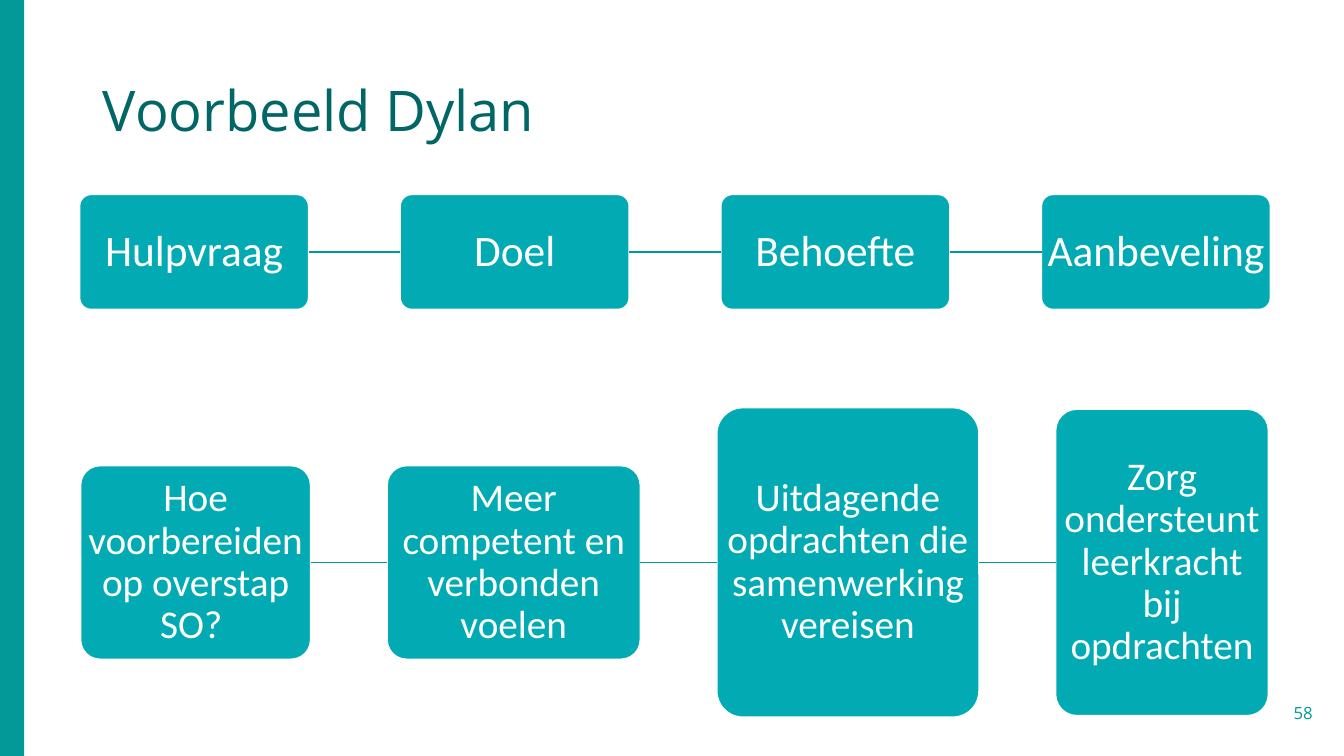
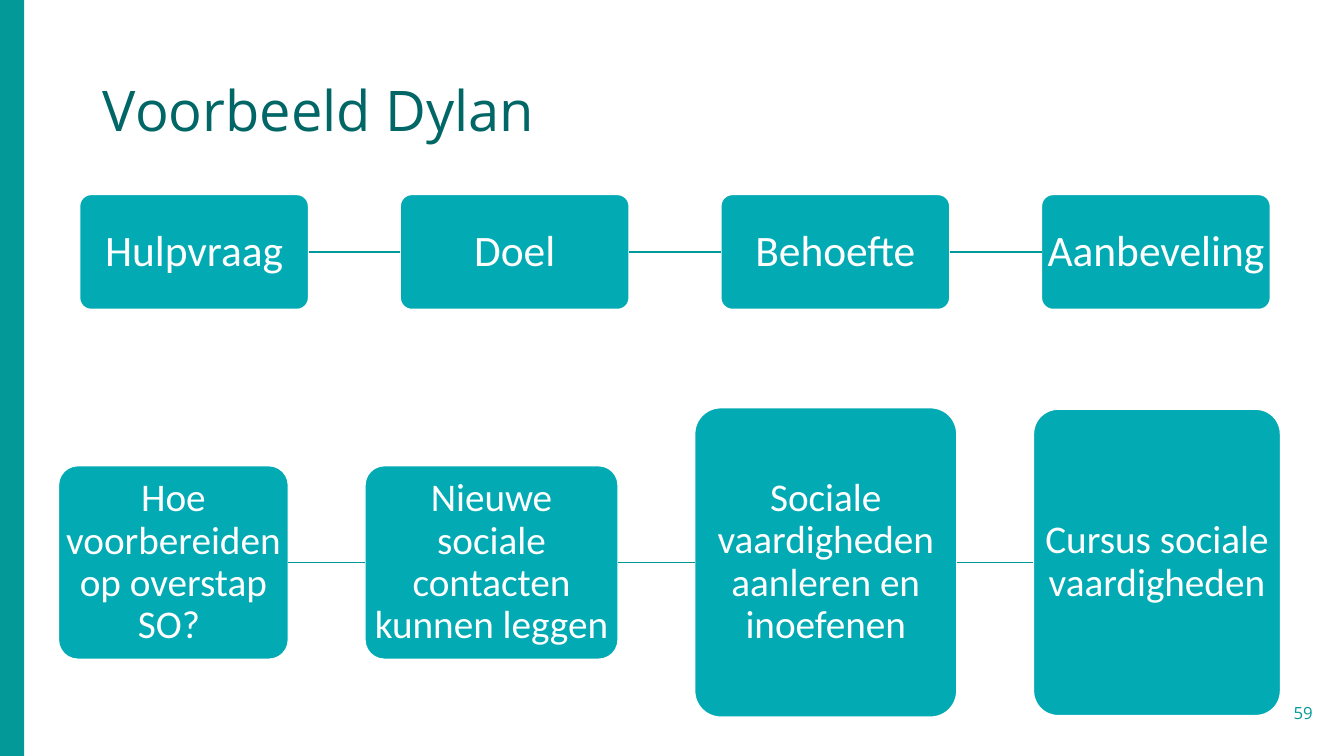
from pptx import Presentation
from pptx.dml.color import RGBColor
from pptx.enum.shapes import MSO_CONNECTOR as Link, MSO_SHAPE as Shape
from pptx.enum.text import MSO_ANCHOR as Anchor, MSO_AUTO_SIZE as Fit, PP_ALIGN as Align
from pptx.oxml.ns import qn
from pptx.util import Inches, Pt
from lxml.etree import SubElement

TEAL, DARK, AQUA, WHITE = "049999", "016666", "02AAB4", "FFFFFF"
HEAD = {"name": "Open Sans", "size": Pt(40)}
FOOT = {"name": "Open Sans", "size": Pt(12)}
FRAME = {"word_wrap": True, "auto_size": Fit.NONE, "vertical_anchor": Anchor.MIDDLE}
SIDES = ("margin_left", "margin_top", "margin_right", "margin_bottom")
TIGHT = dict.fromkeys(SIDES, Inches(0.02))


def paint(form, color):
    form.fore_color.rgb = RGBColor.from_string(color)


def write(shape, text, font, color, align, space=1.0, inset={}):
    frame = shape.text_frame
    frame.text = text
    para = frame.paragraphs[0]
    face = para.runs[0].font
    look = {"alignment": align, "line_spacing": space}
    for part, values in ((frame, FRAME | inset), (para, look), (face, font)):
        for key, value in values.items():
            setattr(part, key, value)
    face.fill.solid()
    paint(face.fill, color)


steps = [(2.27, 1.14, name) for name in ("Hulpvraag", "Doel", "Behoefte", "Aanbeveling ")]
pages = [
    (58, 0.8, [
        (2.28, 1.92, "Hoe voorbereiden op overstap SO? "),
        (2.51, 1.92, "Meer competent en verbonden voelen"),
        (2.6, 3.07, "Uitdagende opdrachten die samenwerking vereisen"),
        (2.11, 3.04, "Zorg ondersteunt leerkracht bij opdrachten"),
    ]),
    (59, 0.58, [
        (2.28, 1.92, "Hoe voorbereiden op overstap SO? "),
        (2.51, 1.92, "Nieuwe sociale contacten kunnen leggen"),
        (2.6, 3.07, "Sociale vaardigheden aanleren en inoefenen"),
        (2.45, 3.04, "Cursus sociale vaardigheden"),
    ]),
]

deck = Presentation()
deck.slide_width, deck.slide_height = Inches(13.33), Inches(7.5)

for number, start, cases in pages:
    slide = deck.slides.add_slide(deck.slide_layouts[5])
    shapes = slide.shapes
    band = shapes.add_shape(Shape.RECTANGLE, 0, 0, Inches(0.24), deck.slide_height)
    band.shadow.inherit = False
    band.fill.solid()
    paint(band.fill, TEAL)
    band.line.fill.background()

    title = shapes.title
    title.left, title.top = Inches(0.92), Inches(0.4)
    title.width, title.height = Inches(11.5), Inches(1.45)
    write(title, "Voorbeeld Dylan", HEAD, DARK, Align.LEFT, 0.9)

    page = shapes.add_textbox(Inches(12.26), Inches(6.87), Inches(0.86), Inches(0.4))
    write(page, str(number), FOOT, TEAL, Align.RIGHT)

    for left, mid, gap, size, row in ((0.79, 2.5, 0.91, 31, steps), (start, 5.58, 0.76, 28, cases)):
        last = None
        for width, height, text in row:
            box = shapes.add_shape(Shape.ROUNDED_RECTANGLE, Inches(left), Inches(mid - height / 2),
                                   Inches(width), Inches(height))
            box.adjustments[0] = 0.1
            box.shadow.inherit = False
            box.fill.solid()
            paint(box.fill, AQUA)
            box.line.fill.solid()
            paint(box.line.fill, WHITE)
            box.line.width = Pt(1)
            write(box, text, {"name": "Calibri", "size": Pt(size)}, WHITE, Align.CENTER, 0.9, TIGHT)
            if last is not None:
                line = shapes.add_connector(Link.STRAIGHT, 0, 0, 0, 0)
                line.begin_connect(last, 3)
                line.end_connect(box, 1)
                line.line.fill.solid()
                paint(line.line.fill, TEAL)
                line.line.width = Pt(1)
                SubElement(line._element.spPr, qn("a:effectLst"))
            last = box
            left += width + gap

deck.save("out.pptx")
